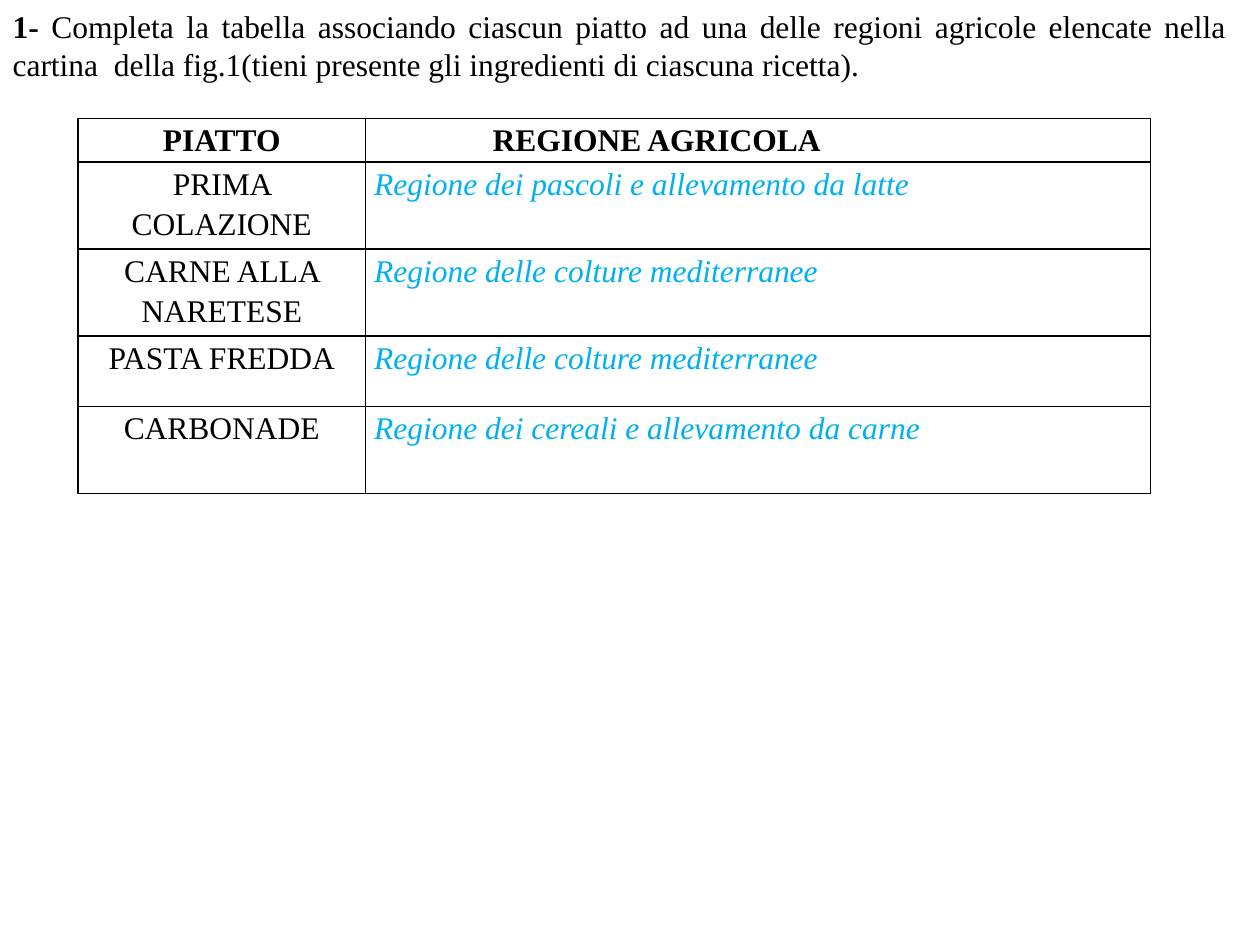
"""Build a slide with an exercise prompt and a table of dishes and farming regions."""
from lxml.etree import SubElement as Sub
from pptx import Presentation
from pptx.dml.color import RGBColor as RGB
from pptx.enum.text import MSO_ANCHOR as Anchor, MSO_AUTO_SIZE as Auto, PP_ALIGN as Align
from pptx.oxml.ns import qn
from pptx.util import Inches, Pt

COLORS = {"ink": "000000", "paper": "FFFFFF", "answer": "00B0F0"}
FONT, SIZE = "Times New Roman", 18
PROMPT = [
    ("1- ", True),
    ("Completa la tabella associando ciascun piatto ad una delle regioni agricole "
     "elencate nella cartina  della fig.1(tieni presente gli ingredienti di ciascuna "
     "ricetta).", False),
]
ROWS = [
    ("PIATTO", "REGIONE AGRICOLA", 0.34),
    ("PRIMA COLAZIONE", "Regione dei pascoli e allevamento da latte", 0.69),
    ("CARNE ALLA NARETESE", "Regione delle colture mediterranee", 0.69),
    ("PASTA FREDDA", "Regione delle colture mediterranee", 0.56),
    ("CARBONADE", "Regione dei cereali e allevamento da carne", 0.69),
]
COLS = (2.28, 6.23)
LEFT, TOP, PAD, INDENT = 0.62, 0.94, 0.07, 1.01


def style(font, color="ink", bold=False, italic=False):
    font.name, font.size = FONT, Pt(SIZE)
    font.bold, font.italic = bold, italic
    font.color.rgb = RGB.from_string(COLORS[color])


def frame(cell):
    props = cell._tc.get_or_add_tcPr()
    for pos, side in enumerate(("lnL", "lnR", "lnT", "lnB")):
        line = Sub(props, qn(f"a:{side}"), w=str(Pt(1)))
        fill = Sub(line, qn("a:solidFill"))
        Sub(fill, qn("a:srgbClr"), val=COLORS["ink"])
        props.insert(pos, line)


def fill_cell(cell, text, head, answer):
    cell.fill.solid()
    cell.fill.fore_color.rgb = RGB.from_string(COLORS["paper"])
    cell.margin_left = Inches(INDENT if head and answer else PAD)
    cell.margin_right = Inches(PAD)
    cell.margin_top = cell.margin_bottom = 0
    cell.text = text
    para = cell.text_frame.paragraphs[0]
    para.alignment = Align.JUSTIFY if answer else Align.CENTER
    para.line_spacing = 1.15
    color = "answer" if answer and not head else "ink"
    style(para.font, color, bold=head, italic=answer and not head)
    frame(cell)


def add_prompt(slide):
    title = slide.shapes.title
    title.left, title.top = 0, 0
    title.width, title.height = Inches(9.84), Inches(0.71)
    body = title.text_frame
    body.word_wrap, body.auto_size = True, Auto.SHAPE_TO_FIT_TEXT
    body.vertical_anchor = Anchor.MIDDLE
    para = body.paragraphs[0]
    para.alignment = Align.JUSTIFY
    for text, bold in PROMPT:
        run = para.add_run()
        run.text = text
        style(run.font, bold=bold)


def add_grid(slide):
    high = sum(row[-1] for row in ROWS)
    table = slide.shapes.add_table(
        len(ROWS), len(COLS), Inches(LEFT), Inches(TOP),
        Inches(sum(COLS)), Inches(high)).table
    table.horz_banding = False
    for col, wide in zip(table.columns, COLS):
        col.width = Inches(wide)
    for r, (*texts, tall) in enumerate(ROWS):
        table.rows[r].height = Inches(tall)
        for c, text in enumerate(texts):
            fill_cell(table.cell(r, c), text, r == 0, c == 1)


def main():
    deck = Presentation()
    deck.slide_width, deck.slide_height = Inches(10), Inches(7.5)
    slide = deck.slides.add_slide(deck.slide_layouts[5])
    add_prompt(slide)
    add_grid(slide)
    deck.save("out.pptx")


if __name__ == "__main__":
    main()
